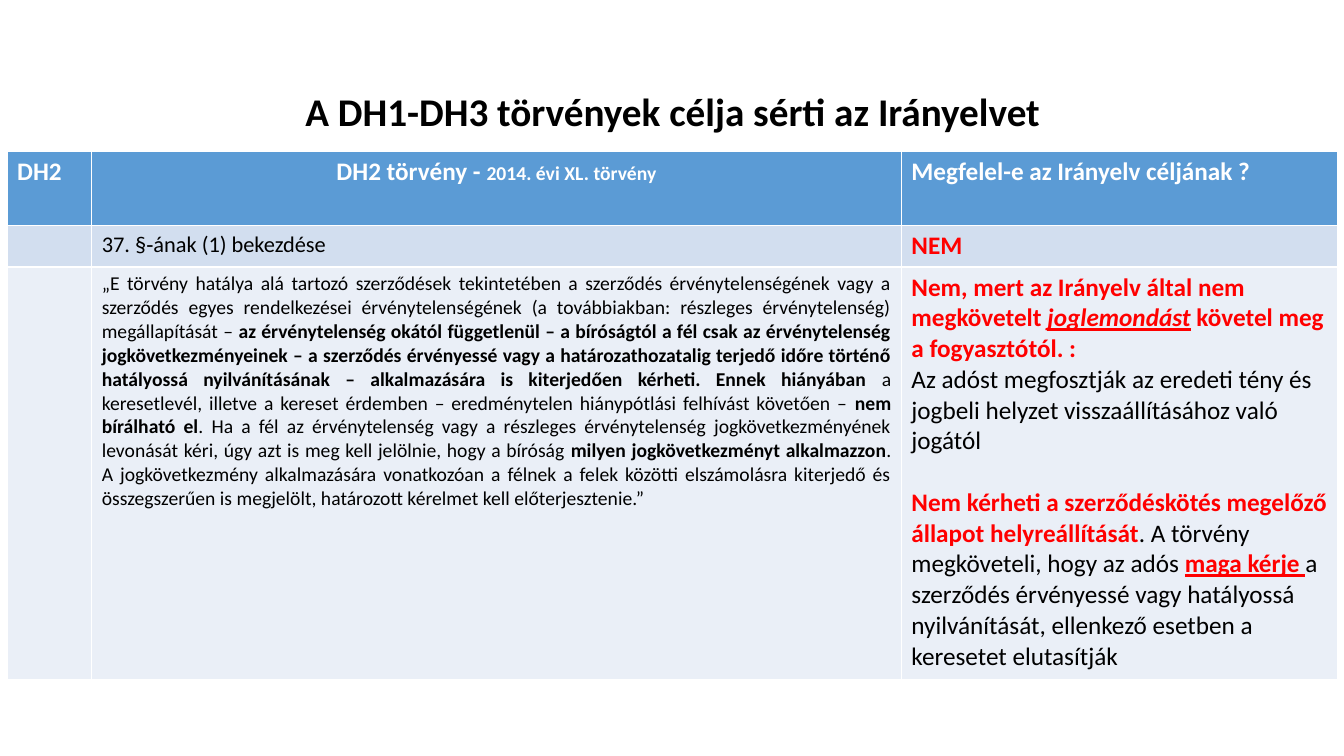
from dataclasses import dataclass

from pptx import Presentation
from pptx.dml.color import RGBColor
from pptx.enum.text import MSO_ANCHOR, PP_ALIGN
from pptx.util import Inches, Pt

LEFT, CENTER, JUSTIFY = PP_ALIGN.LEFT, PP_ALIGN.CENTER, PP_ALIGN.JUSTIFY
MIDDLE = MSO_ANCHOR.MIDDLE
FONT = "Calibri"
TITLE_ONLY = 5
COLORS = {
    "white": "FFFFFF",
    "black": "000000",
    "red": "FF0000",
    "header": "5B9BD5",
    "band": "D2DEEF",
    "light": "EAEFF7",
}
COL_WIDTHS = (0.84, 8.03, 4.33)
ROW_HEIGHTS = (0.74, 0.41, 4.09)
ROW_FILLS = ("header", "band", "light")


@dataclass(frozen=True)
class Run:
    text: str
    size: int = 18
    color: str = "black"
    bold: bool = False
    italic: bool = False
    underline: bool = False


@dataclass(frozen=True)
class Para:
    runs: tuple[Run, ...]
    align: PP_ALIGN = LEFT
    before: int = 0


def head(text: str, size: int = 18) -> Run:
    return Run(text, size, "white", True)


def law(text: str, bold: bool = False) -> Run:
    return Run(text, 14, bold=bold)


def red(text: str, italic: bool = False, underline: bool = False) -> Run:
    return Run(text, 18, "red", True, italic, underline)


LAW_TEXT = Para((
    law("„E törvény hatálya alá tartozó szerződések tekintetében a szerződés "
        "érvénytelenségének vagy a szerződés egyes rendelkezései érvénytelenségének "
        "(a továbbiakban: részleges érvénytelenség) megállapítását –"),
    law(" az érvénytelenség okától függetlenül – a bíróságtól a fél csak az "
        "érvénytelenség jogkövetkezményeinek – a szerződés érvényessé vagy a "
        "határozathozatalig terjedő időre történő hatályossá nyilvánításának – "
        "alkalmazására is kiterjedően kérheti. Ennek hiányában ", True),
    law("a keresetlevél, illetve a kereset érdemben – eredménytelen "
        "hiánypótlási felhívást követően – "),
    law("nem bírálható el", True),
    law(". Ha a fél az érvénytelenség vagy a részleges érvénytelenség "
        "jogkövetkezményének levonását kéri, úgy azt is meg kell jelölnie, "
        "hogy a bíróság "),
    law("milyen jogkövetkezményt alkalmazzon", True),
    law(". A jogkövetkezmény alkalmazására vonatkozóan a félnek a felek közötti "
        "elszámolásra kiterjedő és összegszerűen is megjelölt, határozott kérelmet "
        "kell előterjesztenie.”"),
), JUSTIFY)

ASSESSMENT = (
    Para((
        red("Nem, mert az Irányelv által nem megkövetelt "),
        red("joglemondást", italic=True, underline=True),
        red(" követel meg a fogyasztótól. :"),
    )),
    Para((Run("Az adóst megfosztják az eredeti tény és jogbeli helyzet "
              "visszaállításához való jogától"),)),
    Para((
        red("Nem kérheti a szerződéskötés megelőző állapot helyreállítását"),
        Run(". A törvény megköveteli, hogy az adós "),
        red("maga kérje ", underline=True),
        Run("a szerződés érvényessé vagy hatályossá nyilvánítását, ellenkező "
            "esetben a keresetet elutasítják"),
    ), before=22),
)

ROWS = (
    (
        (Para((head("DH2"),)),),
        (Para((head("DH2 törvény - "), head("2014. évi XL. törvény", 14)), CENTER),),
        (Para((head("Megfelel-e az Irányelv céljának ?"),)),),
    ),
    (
        (),
        (Para((Run("37. §‑ának (1) bekezdése", 16),)),),
        (Para((red("NEM"),)),),
    ),
    ((), (LAW_TEXT,), ASSESSMENT),
)


def rgb(name: str) -> RGBColor:
    return RGBColor.from_string(COLORS[name])


def write(tf, paras: tuple[Para, ...]) -> None:
    for i, para in enumerate(paras):
        p = tf.add_paragraph() if i else tf.paragraphs[0]
        p.alignment = para.align
        if para.before:
            p.space_before = Pt(para.before)
        for run in para.runs:
            r = p.add_run()
            r.text = run.text
            r.font.name = FONT
            r.font.size = Pt(run.size)
            r.font.bold = run.bold
            r.font.italic = run.italic
            r.font.underline = run.underline
            r.font.color.rgb = rgb(run.color)


def add_title(s) -> None:
    sp = s.shapes.title
    sp.left, sp.top = Inches(0.92), Inches(0.4)
    sp.width, sp.height = Inches(11.5), Inches(1.45)
    tf = sp.text_frame
    tf.vertical_anchor = MIDDLE
    title = Run("A DH1-DH3 törvények célja sérti az Irányelvet", 28, bold=True)
    write(tf, (Para((title,), CENTER),))
    tf.paragraphs[0].line_spacing = 0.9


def add_law_table(s) -> None:
    table = s.shapes.add_table(
        len(ROW_HEIGHTS), len(COL_WIDTHS), Inches(0.07), Inches(1.5),
        Inches(sum(COL_WIDTHS)), Inches(sum(ROW_HEIGHTS)),
    ).table
    for col, width in zip(table.columns, COL_WIDTHS):
        col.width = Inches(width)
    for row, height, fill, contents in zip(table.rows, ROW_HEIGHTS, ROW_FILLS, ROWS):
        row.height = Inches(height)
        for cell, paras in zip(row.cells, contents):
            cell.fill.solid()
            cell.fill.fore_color.rgb = rgb(fill)
            write(cell.text_frame, paras)


def main() -> None:
    prs = Presentation()
    prs.slide_width, prs.slide_height = Inches(13.33), Inches(7.5)
    s = prs.slides.add_slide(prs.slide_layouts[TITLE_ONLY])
    add_title(s)
    add_law_table(s)
    prs.save("out.pptx")


if __name__ == "__main__":
    main()
